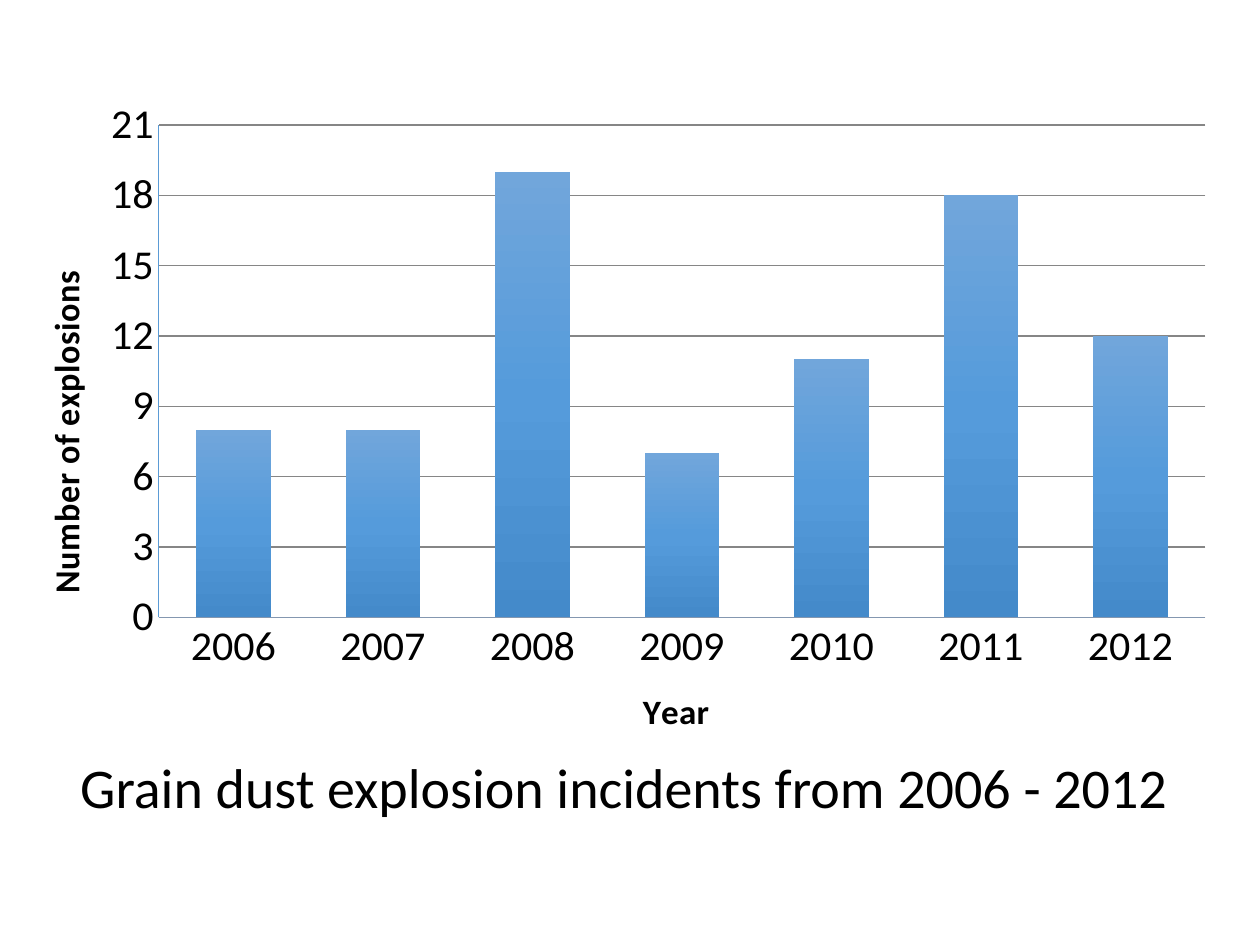
from lxml import etree
from pptx import Presentation
from pptx import util as u
from pptx.chart.data import CategoryChartData
from pptx.dml.color import RGBColor
from pptx.enum import chart as ch, text
from pptx.oxml import parse_xml
from pptx.oxml.ns import nsdecls, qn

CAPTION = "Grain dust explosion incidents from 2006 - 2012"
EXPLOSIONS = {"2006": 8, "2007": 8, "2008": 19, "2009": 7,
              "2010": 11, "2011": 18, "2012": 12}
GRADIENT = [(0, "71A6DB"), (50, "559BDB"), (100, "448ACA")]
PLOT_AREA = {"x": 0.121, "y": 0.1, "w": 0.852, "h": 0.736}
FONT, BLACK = "Calibri", "000000"
LEFT, WIDTH = u.Inches(0.08), u.Inches(9.75)


def color(hex_value):
    return RGBColor.from_string(hex_value)


def style_font(font, size, bold=False):
    font.name, font.size, font.bold = FONT, u.Pt(size), bold
    font.color.rgb = color(BLACK)


def style_line(line, hex_value, width):
    line.color.rgb = color(hex_value)
    line.width = u.Pt(width)


def layout_xml(target, **fractions):
    """Manual layout in fractions of the chart; target is 'inner' or None."""
    layout = etree.fromstring(f'<c:layout {nsdecls("c")}><c:manualLayout/></c:layout>')
    settings = [("layoutTarget", target)] if target else []
    settings += [("xMode", "edge"), ("yMode", "edge"), *fractions.items()]
    for name, value in settings:
        etree.SubElement(layout[0], qn(f"c:{name}")).set("val", str(value))
    return layout


def replace_layout(parent, layout, index):
    for old in parent.findall(qn("c:layout")):
        parent.remove(old)
    parent.insert(index, layout)


def style_axis(axis, title, title_x, title_y, line_color, line_width):
    axis.major_tick_mark = axis.minor_tick_mark = ch.XL_TICK_MARK.NONE
    style_font(axis.tick_labels.font, 24)
    style_line(axis.format.line, line_color, line_width)
    para = axis.axis_title.text_frame.paragraphs[0]
    para.text = title
    style_font(para.font, 20, bold=True)
    replace_layout(axis.axis_title._element,
                   layout_xml(None, x=title_x, y=title_y), 1)


deck = Presentation()
deck.slide_width, deck.slide_height = u.Inches(10), u.Inches(7.5)
slide = deck.slides.add_slide(deck.slide_layouts[6])

box = slide.shapes.add_textbox(LEFT, u.Inches(5.92), WIDTH, u.Inches(0.64))
box.text_frame.word_wrap = True
box.text_frame.auto_size = text.MSO_AUTO_SIZE.SHAPE_TO_FIT_TEXT
para = box.text_frame.paragraphs[0]
para.text = CAPTION
para.alignment = text.PP_ALIGN.CENTER
style_font(para.font, 32)

data = CategoryChartData()
data.categories = list(EXPLOSIONS)
data.add_series("Series 1", list(EXPLOSIONS.values()))
chart = slide.shapes.add_chart(ch.XL_CHART_TYPE.COLUMN_CLUSTERED, LEFT,
                               u.Inches(0.46), WIDTH, u.Inches(5.44), data).chart
chart.has_title = chart.has_legend = False
style_font(chart.font, 18)
replace_layout(chart._chartSpace.chart.plotArea, layout_xml("inner", **PLOT_AREA), 0)

style_axis(chart.category_axis, "Year", 0.51, 0.93, "8497B0", 1)
value_axis = chart.value_axis
style_axis(value_axis, "Number of explosions", 0.02, 0.32, "5B9BD5", 0.75)
value_axis.minimum_scale, value_axis.maximum_scale, value_axis.major_unit = 0, 21, 3
value_axis.has_major_gridlines = True
style_line(value_axis.major_gridlines.format.line, "868686", 0.75)

plot = chart.plots[0]
plot.gap_width, plot.vary_by_categories = 100, False
stops = "".join(f'<a:gs pos="{pos * 1000}"><a:srgbClr val="{hex_value}"/></a:gs>'
                for pos, hex_value in GRADIENT)
series_format = plot.series[0].format
series_format.line.fill.background()
series_properties = plot.series[0]._element.get_or_add_spPr()
series_properties.insert(0, parse_xml(
    f'<a:gradFill {nsdecls("a")} rotWithShape="1"><a:gsLst>{stops}</a:gsLst>'
    '<a:lin ang="5400000" scaled="0"/></a:gradFill>'))

deck.save("out.pptx")
